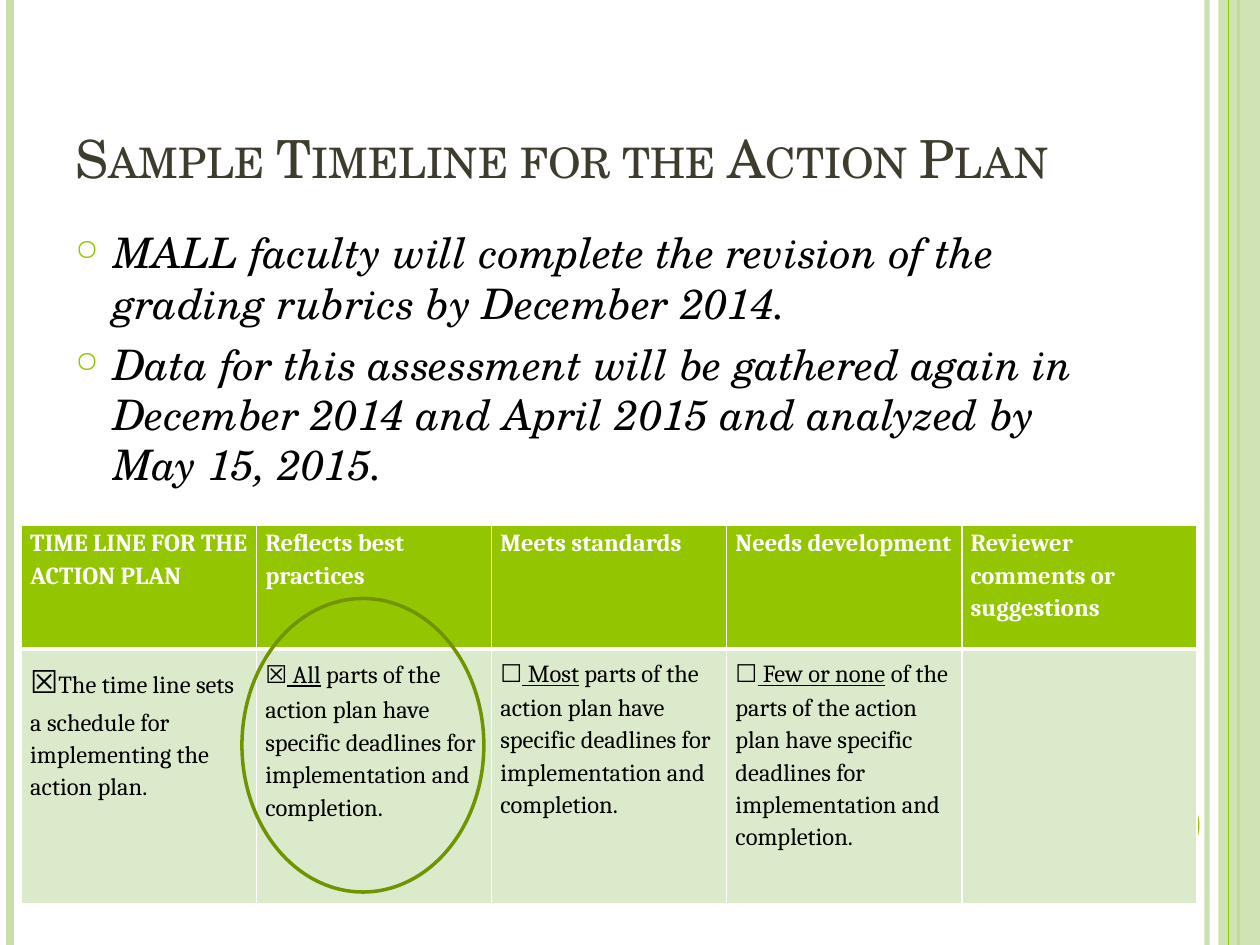
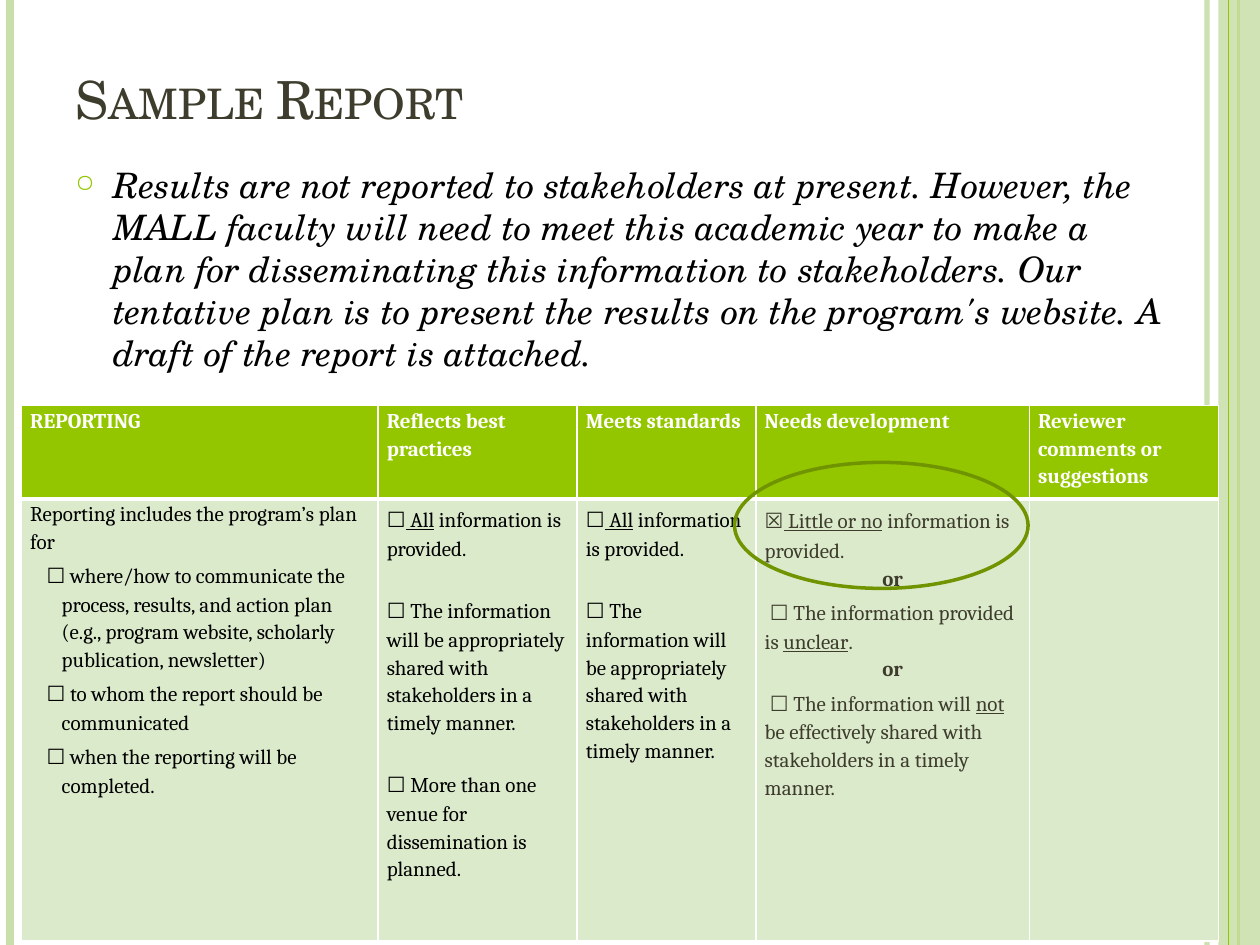
"""Build two rubric slides: the action plan timeline and the report."""
from dataclasses import dataclass
from typing import Optional

from lxml.etree import SubElement
from pptx import Presentation
from pptx.dml.color import RGBColor
from pptx.enum.shapes import MSO_CONNECTOR as Connector, MSO_SHAPE as Shape
from pptx.enum.text import MSO_ANCHOR as Anchor, MSO_AUTO_SIZE as AutoSize, PP_ALIGN as Align
from pptx.oxml.ns import qn
from pptx.util import Inches, Pt

GREEN = RGBColor(0x94, 0xC6, 0x00)
PALE_GREEN = RGBColor(0xC8, 0xDF, 0xAB)
CELL_GREEN = RGBColor(0xDC, 0xEA, 0xCC)
DARK_GREEN = RGBColor(0x6F, 0x94, 0x00)
OLIVE = RGBColor(0x3E, 0x3D, 0x2D)
BLACK = RGBColor(0, 0, 0)
WHITE = RGBColor(0xFF, 0xFF, 0xFF)
SERIF, SYMBOLS, SCHOLA = "Cambria", "Noto Sans CJK JP", "TeX Gyre Schola"
HEADINGS = ["Reflects best practices", "Meets standards", "Needs development",
            "Reviewer comments or suggestions"]


@dataclass(frozen=True)
class Box:
    left: float
    top: float
    width: float
    height: float

    def lengths(self) -> list:
        return [Inches(value) for value in (self.left, self.top, self.width, self.height)]


@dataclass(frozen=True)
class Rule:
    x: float
    color: RGBColor
    weight: float
    opacity: int = 100


@dataclass(frozen=True)
class Words:
    text: str
    font: str = SERIF
    bold: bool = False
    underline: bool = False
    italic: bool = False
    size: Optional[float] = None


@dataclass(frozen=True)
class Para:
    words: list
    left: float = 0
    first: float = 0
    before: float = 0
    align: Align = Align.LEFT


@dataclass(frozen=True)
class Rubric:
    box: Box
    columns: list
    rows: list
    size: float
    topic: str
    cells: list
    colors: list


@dataclass(frozen=True)
class RubricSlide:
    title: str
    title_box: Box
    points: list
    points_box: Box
    points_size: float
    rubric: Rubric
    circle: Box


RULES_BELOW = [Rule(9.58, PALE_GREEN, 3, 93), Rule(0.08, PALE_GREEN, 4.5), Rule(9.83, GREEN, 1.5)]
RULE_ABOVE = Rule(9.75, GREEN, 0.75)
SIDE_BAND = Box(9.67, 0, 0.33, 7.5)
DISC = Box(8.92, 6.25, 0.6, 0.6)


def option(rest: str, stressed: str = "", **layout) -> Para:
    """Return an unticked choice whose stressed words are underlined."""
    words = [Words("☐", SYMBOLS)]
    if stressed:
        words.append(Words(" " + stressed, underline=True))
    return Para(words + [Words(" " + rest)], **layout)


def chosen(stressed: str, rest: str) -> Para:
    """Return a ticked choice."""
    return Para([Words("☒", SCHOLA, bold=True), Words(" " + stressed, underline=True),
                 Words(" " + rest)])


def alternative(start: str, stressed: str, rest: str) -> list:
    """Return a centred 'or' and the choice that follows it."""
    return [Para([Words("or", bold=True)], align=Align.CENTER),
            Para([Words("☐ ", SYMBOLS), Words(start), Words(stressed, underline=True),
                  Words(rest)], first=0.04)]


def set_opacity(color_format_parent, percent: int) -> None:
    """Make the solid colour under an element partly transparent."""
    if percent < 100:
        color = color_format_parent.find(".//" + qn("a:srgbClr"))
        SubElement(color, qn("a:alpha"), val=str(percent * 1000))


def add_words(paragraph, words: Words, size: float, color: RGBColor):
    """Add one formatted run."""
    run = paragraph.add_run()
    run.text = words.text
    font = run.font
    font.size, font.bold, font.italic = Pt(words.size or size), words.bold, words.italic
    font.underline, font.name = words.underline, words.font
    font.color.rgb = color
    SubElement(run._r.get_or_add_rPr(), qn("a:ea"), typeface=words.font)
    return run


def add_paragraphs(frame, paras: list, size: float, color: RGBColor) -> list:
    """Fill a text frame and return its paragraphs."""
    for index, para in enumerate(paras):
        paragraph = frame.add_paragraph() if index else frame.paragraphs[0]
        paragraph.alignment = para.align
        paragraph.space_before = Pt(para.before)
        properties = paragraph._p.get_or_add_pPr()
        properties.set("marL", str(Inches(para.left)))
        properties.set("indent", str(Inches(para.first)))
        for words in para.words:
            add_words(paragraph, words, size, color)
    return list(frame.paragraphs)


def add_rule(slide, rule: Rule) -> None:
    """Draw a full-height vertical line."""
    line = slide.shapes.add_connector(Connector.STRAIGHT, Inches(rule.x), 0,
                                      Inches(rule.x), Inches(7.5))
    line.line.color.rgb, line.line.width = rule.color, Pt(rule.weight)
    set_opacity(line._element.spPr, rule.opacity)
    SubElement(line._element.spPr, qn("a:effectLst"))


def add_plain(slide, kind: Shape, box: Box, fill: Optional[RGBColor] = None, opacity: int = 100):
    """Draw a shape without outline or shadow."""
    shape = slide.shapes.add_shape(kind, *box.lengths())
    shape.shadow.inherit = False
    shape.line.fill.background()
    if fill is None:
        shape.fill.background()
    else:
        shape.fill.solid()
        shape.fill.fore_color.rgb = fill
        set_opacity(shape._element.spPr, opacity)
    return shape


def add_backdrop(slide) -> None:
    """Draw the shared side lines, band and disc."""
    for rule in RULES_BELOW:
        add_rule(slide, rule)
    add_plain(slide, Shape.RECTANGLE, SIDE_BAND, PALE_GREEN, 87)
    add_rule(slide, RULE_ABOVE)
    add_plain(slide, Shape.OVAL, DISC, GREEN)


def set_title(slide, text: str, box: Box) -> None:
    """Move the title placeholder and set it in small capitals."""
    title = slide.shapes.title
    title.left, title.top, title.width, title.height = box.lengths()
    frame = title.text_frame
    frame.vertical_anchor, frame.word_wrap, frame.auto_size = Anchor.BOTTOM, True, AutoSize.NONE
    frame.paragraphs[0].alignment = Align.LEFT
    run = add_words(frame.paragraphs[0], Words(text, SCHOLA), 30, OLIVE)
    run._r.get_or_add_rPr().set("cap", "small")


def add_points(slide, points: list, box: Box, size: float) -> None:
    """Add the italic bulleted text."""
    frame = slide.shapes.add_textbox(*box.lengths()).text_frame
    frame.word_wrap = True
    paras = [Para([Words(point, SCHOLA, italic=True)], 0.3, -0.3, 6) for point in points]
    for paragraph in add_paragraphs(frame, paras, size, BLACK):
        properties = paragraph._p.get_or_add_pPr()
        SubElement(SubElement(properties, qn("a:buClr")), qn("a:srgbClr"), val=str(GREEN))
        SubElement(properties, qn("a:buSzPct"), val="70000")
        SubElement(properties, qn("a:buChar"), char="○")


def set_borders(cell, top: float, bottom: float) -> None:
    """Give a cell white borders, placed before its fill."""
    properties = cell._tc.get_or_add_tcPr()
    weights = {"a:lnL": 1, "a:lnR": 1, "a:lnT": top, "a:lnB": bottom}
    for index, (tag, weight) in enumerate(weights.items()):
        border = SubElement(properties, qn(tag), w=str(Pt(weight)))
        SubElement(SubElement(border, qn("a:solidFill")), qn("a:srgbClr"), val=str(WHITE))
        properties.insert(index, border)


def add_rubric(slide, rubric: Rubric) -> None:
    """Add the rubric table."""
    table = slide.shapes.add_table(2, len(rubric.columns), *rubric.box.lengths()).table
    for column, width in zip(table.columns, rubric.columns):
        column.width = Inches(width)
    for row, height in zip(table.rows, rubric.rows):
        row.height = Inches(height)
    header = [[Para([Words(text, bold=True)])] for text in [rubric.topic, *HEADINGS]]
    rows = [(header, GREEN, [WHITE] * len(header), (1, 3)),
            (rubric.cells, CELL_GREEN, rubric.colors, (3, 1))]
    for row_index, (contents, fill, colors, borders) in enumerate(rows):
        for column_index, (paras, color) in enumerate(zip(contents, colors)):
            cell = table.cell(row_index, column_index)
            cell.margin_left = cell.margin_right = Inches(0.07)
            cell.margin_top = cell.margin_bottom = 0
            cell.fill.solid()
            cell.fill.fore_color.rgb = fill
            set_borders(cell, *borders)
            for paragraph in add_paragraphs(cell.text_frame, paras, rubric.size, color):
                paragraph.line_spacing = 1.15


def add_slide(presentation, content: RubricSlide) -> None:
    """Build one slide."""
    slide = presentation.slides.add_slide(presentation.slide_layouts[5])
    add_backdrop(slide)
    set_title(slide, content.title, content.title_box)
    add_points(slide, content.points, content.points_box, content.points_size)
    add_rubric(slide, content.rubric)
    circle = add_plain(slide, Shape.OVAL, content.circle)
    circle.line.color.rgb, circle.line.width = DARK_GREEN, Pt(2)


DEADLINES = "parts of the action plan have specific deadlines for implementation and completion."
PROVIDED = "information is provided."
SHARED = "The information will be appropriately shared with stakeholders in a timely manner."
HANGING = {"left": 0.25, "first": -0.12}
GAP = 16

TIMELINE = RubricSlide(
    "Sample Timeline for the Action Plan", Box(0.5, 0.3, 8.17, 1.25),
    ["MALL faculty will complete the revision of the grading rubrics by December 2014.",
     "Data for this assessment will be gathered again in December 2014 and April 2015 "
     "and analyzed by May 15, 2015."],
    Box(0.5, 1.75, 8.17, 2.42), 24,
    Rubric(Box(0.17, 4.17, 9.33, 3), [9.33 / 5] * 5, [0.98, 2.02], 14,
           "TIME LINE FOR THE ACTION PLAN",
           [[Para([Words("☒", SCHOLA, bold=True, size=18),
                   Words("The time line sets a schedule for implementing the action plan.")])],
            [chosen("All", DEADLINES)],
            [option(DEADLINES, "Most")],
            [option("of the " + DEADLINES, "Few or none")],
            []],
           [BLACK] * 5),
    Box(1.92, 4.75, 1.92, 2.33))

REPORT = RubricSlide(
    "Sample Report", Box(0.5, 0.3, 8.17, 0.78),
    ["Results are not reported to stakeholders at present. However, the MALL faculty will need "
     "to meet this academic year to make a plan for disseminating this information to "
     "stakeholders. Our tentative plan is to present the results on the program's website. "
     "A draft of the report is attached."],
    Box(0.5, 1.25, 8.83, 2), 20,
    Rubric(Box(0.17, 3.22, 9.5, 4.25), [2.83, 1.58, 1.42, 2.17, 1.5], [0.74, 3.51], 12,
           "REPORTING",
           [[Para([Words("Reporting includes the program’s plan for")]),
             option("where/how to communicate the process, results, and action plan "
                    "(e.g., program website, scholarly publication, newsletter)", **HANGING),
             option("to whom the report should be communicated", **HANGING),
             option("when the reporting will be completed.", **HANGING)],
            [option(PROVIDED, "All"), option(SHARED, before=GAP),
             option("More than one venue for dissemination is planned.", before=GAP)],
            [option(PROVIDED, "All"), option(SHARED, before=GAP)],
            [chosen("Little or no", PROVIDED),
             *alternative("The information provided is ", "unclear", "."),
             *alternative("The information will ", "not",
                          " be effectively shared with stakeholders in a timely manner.")],
            []],
           [BLACK, BLACK, BLACK, OLIVE, BLACK]),
    Box(5.83, 3.67, 2.33, 1))


def main() -> None:
    """Build and save the presentation."""
    presentation = Presentation()
    presentation.slide_width, presentation.slide_height = Inches(10), Inches(7.5)
    for content in (TIMELINE, REPORT):
        add_slide(presentation, content)
    presentation.save("out.pptx")


if __name__ == "__main__":
    main()
